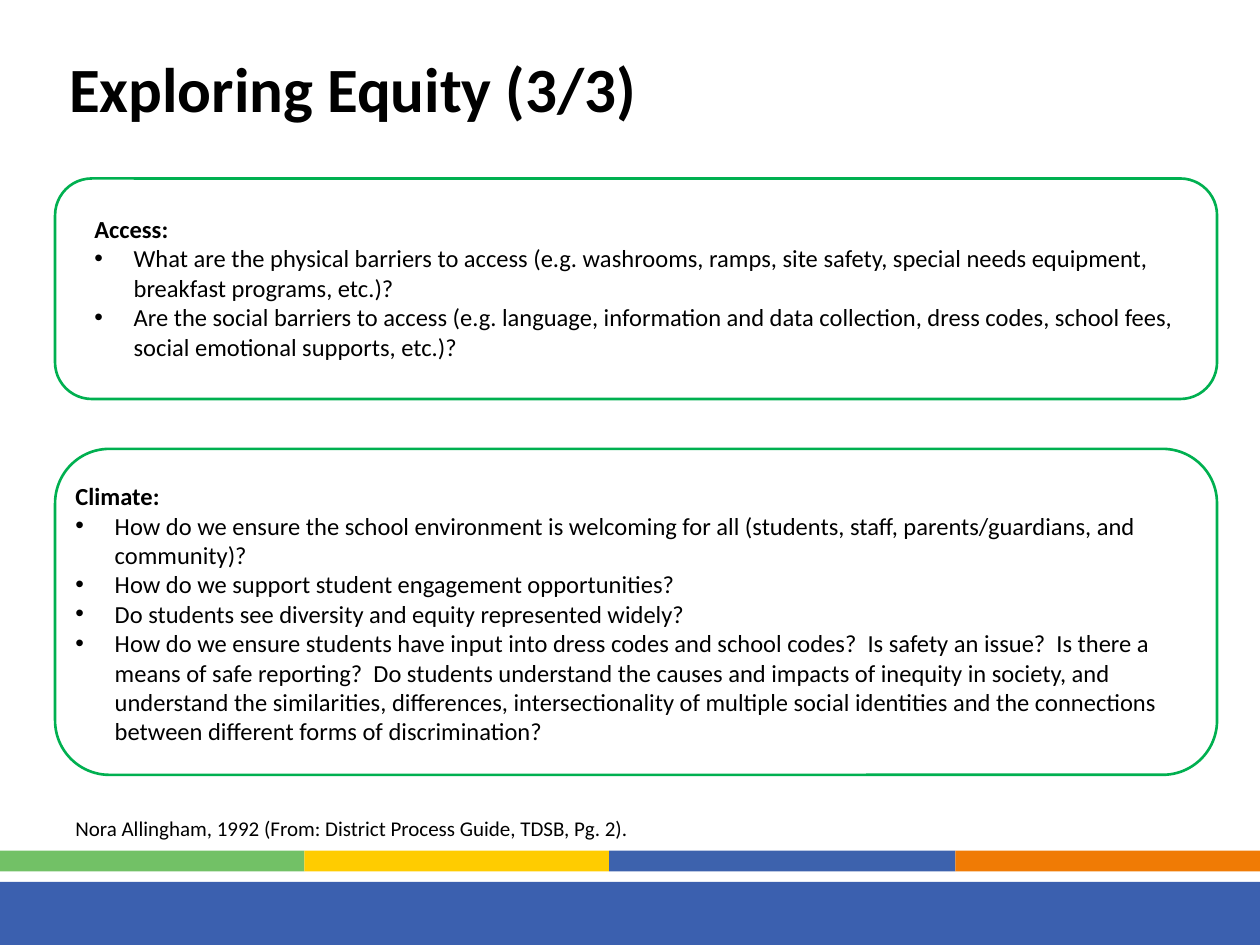
"""Build the "Exploring Equity (3/3)" slide."""
from lxml.etree import SubElement
from pptx import Presentation
from pptx.dml.color import RGBColor
from pptx.enum.shapes import MSO_SHAPE
from pptx.enum.text import MSO_ANCHOR
from pptx.oxml.ns import qn
from pptx.util import Pt

COLORS = {
    "text": "000000", "outline": "00B050", "footer": "3B60AF",
    "green": "72C166", "yellow": "FFCC00", "blue": "3D62AD", "orange": "F07B05",
}
FONT = "Calibri"
WIDTH, HEIGHT = 720, 540
INDENT = 22.5

TITLE = "Exploring Equity (3/3)"
CREDIT = "Nora Allingham, 1992 (From: District Process Guide, TDSB, Pg. 2)."
PANELS = [
    {
        "frame": (31.5, 102, 664, 126),
        "text_area": (46.8, 118.8, 643, 92),
        "heading": "Access:",
        "questions": [
            "What are the physical barriers to access (e.g. washrooms, ramps, site safety, "
            "special needs equipment, breakfast programs, etc.)?",
            "Are the social barriers to access (e.g. language, information and data collection, "
            "dress codes, school fees, social emotional supports, etc.)?",
        ],
    },
    {
        "frame": (31.5, 256.5, 664, 186.3),
        "text_area": (36, 271.4, 664.5, 160),
        "heading": "Climate:",
        "questions": [
            "How do we ensure the school environment is welcoming for all "
            "(students, staff, parents/guardians, and community)?",
            "How do we support student engagement opportunities?",
            "Do students see diversity and equity represented widely?",
            "How do we ensure students have input into dress codes and school codes?  "
            "Is safety an issue?  Is there a means of safe reporting?  Do students understand "
            "the causes and impacts of inequity in society, and understand the similarities, "
            "differences, intersectionality of multiple social identities and the connections "
            "between different forms of discrimination?",
        ],
    },
]
STRIPES = [("green", 174), ("yellow", 174), ("blue", 198), ("orange", 174)]


def color(name):
    return RGBColor.from_string(COLORS[name])


def add_bar(page, area, fill):
    bar = page.shapes.add_shape(MSO_SHAPE.RECTANGLE, *map(Pt, area))
    bar.shadow.inherit = False
    bar.fill.solid()
    bar.fill.fore_color.rgb = color(fill)
    bar.line.fill.background()


def add_frame(page, area):
    frame = page.shapes.add_shape(MSO_SHAPE.ROUNDED_RECTANGLE, *map(Pt, area))
    frame.shadow.inherit = False
    frame.fill.background()
    frame.line.color.rgb = color("outline")
    frame.line.width = Pt(1.5)


def add_text(page, area, lines, size, bold_first=False, anchor=MSO_ANCHOR.TOP):
    box = page.shapes.add_textbox(*map(Pt, area))
    frame = box.text_frame
    frame.word_wrap = True
    frame.vertical_anchor = anchor
    frame.text = "\n".join(lines)
    for index, paragraph in enumerate(frame.paragraphs):
        if index:
            add_bullet(paragraph)
        for span in paragraph.runs:
            span.font.name = FONT
            span.font.size = Pt(size)
            span.font.bold = bold_first and index == 0
            span.font.color.rgb = color("text")


def add_bullet(paragraph):
    properties = paragraph._p.get_or_add_pPr()
    properties.set("marL", str(Pt(INDENT)))
    properties.set("indent", str(-Pt(INDENT)))
    SubElement(properties, qn("a:buFont"), typeface="Arial")
    SubElement(properties, qn("a:buChar"), char="•")


def main():
    deck = Presentation()
    deck.slide_width, deck.slide_height = Pt(WIDTH), Pt(HEIGHT)
    page = deck.slides.add_slide(deck.slide_layouts[6])

    add_bar(page, (0, 504, WIDTH, 36), "footer")
    left = 0
    for name, width in STRIPES:
        add_bar(page, (left, 486, width, 12), name)
        left += width

    add_text(page, (32.4, 18, 486.7, 64), [TITLE], 36, True, MSO_ANCHOR.MIDDLE)
    for panel in PANELS:
        add_frame(page, panel["frame"])
        lines = [panel["heading"], *panel["questions"]]
        add_text(page, panel["text_area"], lines, 14, True)
    add_text(page, (36, 462.2, 664.5, 21.8), [CREDIT], 12)

    deck.save("out.pptx")


if __name__ == "__main__":
    main()
